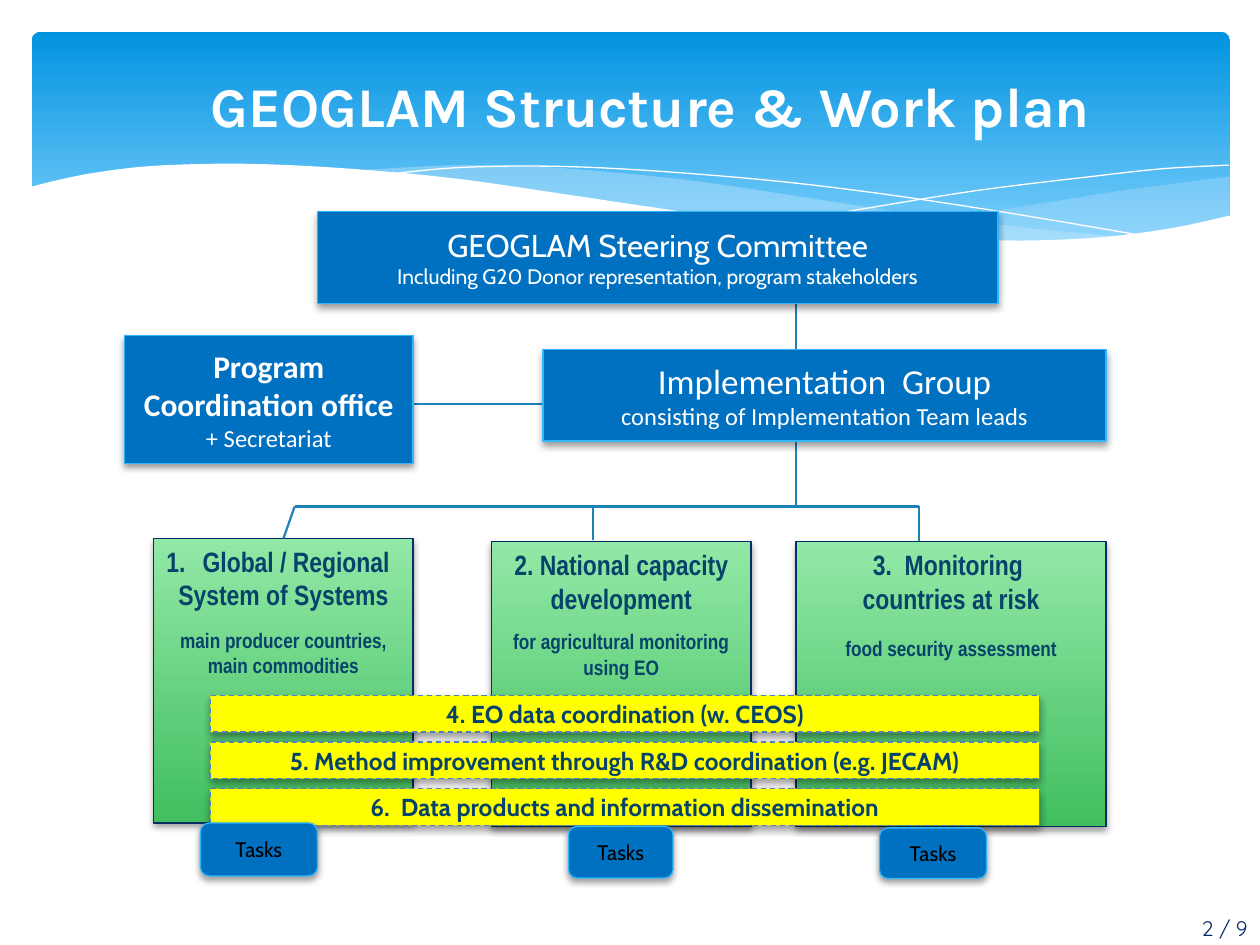
"""Build the GEOGLAM structure and work plan slide."""
import pptx
import pptx.util
import pptx.dml.color
import pptx.enum.shapes
import pptx.enum.text
import pptx.oxml
import pptx.oxml.ns

Cm, Pt = pptx.util.Cm, pptx.util.Pt
SHAPE = pptx.enum.shapes.MSO_SHAPE
ALIGN = pptx.enum.text.PP_ALIGN
ANCHOR = pptx.enum.text.MSO_ANCHOR
NS = pptx.oxml.ns.nsdecls("a")

COLORS = {
    "white": "FFFFFF", "black": "000000", "sky": "0293E0", "pale": "83D3FE",
    "wave": "C6E7FC", "blue": "0070C0", "edge": "31B6FD", "link": "1C83B9",
    "mint": "92E8A6", "green": "41BF60", "navy": "052E65", "ink": "06436B",
    "yellow": "FFFF00", "dash": "4F81BD", "number": "002569",
}
FONTS = {
    "title": {"name": "Karla", "size": Pt(32), "bold": True},
    "committee": {"name": "Cabin", "size": Pt(18)},
    "members": {"name": "Cabin", "size": Pt(12)},
    "group": {"name": "Calibri", "size": Pt(20)},
    "leads": {"name": "Calibri", "size": Pt(14)},
    "office": {"name": "Calibri", "size": Pt(18), "bold": True},
    "heading": {"name": "Arial Narrow", "size": Pt(16), "bold": True},
    "detail": {"name": "Arial Narrow", "size": Pt(12), "bold": True},
    "bar": {"name": "Cabin", "size": Pt(14), "bold": True},
    "number": {"name": "Quicksand", "size": Pt(12)},
}

TITLE = "GEOGLAM Structure & Work plan"
BOXES = [
    ((6.4, 4.27, 13.72, 1.85), [
        ("GEOGLAM Steering Committee", "committee"),
        ("Including G20 Donor representation, program stakeholders", "members")]),
    ((10.95, 7.04, 11.35, 1.85), [
        ("Implementation  Group", "group"),
        ("consisting of Implementation Team leads", "leads")]),
    ((2.51, 6.76, 5.82, 2.59), [
        ("Program Coordination office", "office"), ("+ Secretariat", "leads")]),
]
COLUMNS = [
    ((3.1, 10.85, 5.23, 5.74), " Global / Regional System of Systems",
     "main producer countries, main commodities", 9),
    ((9.91, 10.92, 5.23, 5.74), "2. National capacity development",
     "for agricultural monitoring using EO", 8),
    ((16.05, 10.92, 6.25, 5.74), "3.  Monitoring \ncountries at risk",
     "food security assessment", 12),
]
BARS = [
    "4. EO data coordination (w. CEOS)",
    "5. Method improvement through R&D coordination (e.g. JECAM)",
    "6.  Data products and information dissemination",
]
TASKS = [(4.04, 16.59, 2.36, 1.07), (11.46, 16.66, 2.11, 1.04), (17.73, 16.69, 2.16, 1.02)]
RAIL = 10.21
LINKS = [
    (16.05, RAIL, 16.05, 6.12),
    (5.94, RAIL, 18.52, RAIL),
    (11.96, RAIL, 11.96, 10.88),
    (18.52, RAIL, 18.52, 10.9),
    (8.28, 8.15, 11, 8.15),
]
WAVES = [
    ("wave", 29, [
        [(24.79, 3.56), (22.63, 3.84), (20.45, 4.19), (18.52, 4.45), (16.79, 4.65)],
        [(16.79, 4.65), (17.91, 4.75), (19.23, 4.83), (20.68, 4.85), (22.15, 4.8),
         (23.57, 4.62), (24.79, 4.34)]]),
    ("wave", 40, [
        [(22.68, 4.78), (20.5, 4.57), (17.93, 4.24), (15.98, 3.94), (14.1, 3.66),
         (12.42, 3.48), (10.67, 3.35), (9.17, 3.33), (7.26, 3.43)],
        [(7.26, 3.43), (9.19, 3.61), (11.4, 3.94), (14.38, 4.37), (16.51, 4.62),
         (18.34, 4.8), (20.22, 4.88), (21.54, 4.85), (22.68, 4.78)]]),
    (None, 100, [
        [(7.85, 3.51), (9.22, 3.38), (11, 3.35), (12.95, 3.43), (15.44, 3.63),
         (17.65, 3.89), (20.19, 4.27), (23.04, 4.75)]]),
    (None, 100, [
        [(15.57, 4.52), (17.65, 4.17), (19.71, 3.84), (22, 3.56), (23.47, 3.4),
         (24.77, 3.33)]]),
    ("white", 100, [
        [(24.82, 4.34), (23.62, 4.6), (22.23, 4.78), (20.55, 4.85), (18.44, 4.78),
         (15.9, 4.55), (13.44, 4.22), (11.35, 3.91), (9.27, 3.61), (7.42, 3.43),
         (5.84, 3.33), (4.5, 3.3), (3.02, 3.35), (1.93, 3.48), (1.17, 3.63), (0.58, 3.78)],
        [(0.58, 5.72), (24.82, 5.72)]]),
]


def rgb(name):
    return pptx.dml.color.RGBColor.from_string(COLORS[name])


def paint(sp, fill, line=None, width=0.75):
    sp.shadow.inherit = False
    if isinstance(fill, tuple):
        sp.fill.gradient()
        sp.fill.gradient_angle = 270
        for stop, name in zip(sp.fill.gradient_stops, fill):
            stop.color.rgb = rgb(name)
    elif fill:
        sp.fill.solid()
        sp.fill.fore_color.rgb = rgb(fill)
    else:
        sp.fill.background()
    if line:
        sp.line.color.rgb = rgb(line)
        sp.line.width = Pt(width)
    else:
        sp.line.fill.background()


def write(tf, lines, color, align=ALIGN.CENTER, anchor=ANCHOR.MIDDLE):
    tf.word_wrap = True
    tf.vertical_anchor = anchor
    for i, (text, font) in enumerate(lines):
        p = tf.add_paragraph() if i else tf.paragraphs[0]
        p.text = text
        p.alignment = align
        for r in p.runs:
            r.font.color.rgb = rgb(color)
            for key, value in FONTS[font].items():
                setattr(r.font, key, value)


def add_box(s, at, lines, color, fill, line, kind=SHAPE.RECTANGLE, anchor=ANCHOR.MIDDLE):
    sp = s.shapes.add_shape(kind, *map(Cm, at))
    paint(sp, fill, line)
    sp.element.spPr.find(pptx.oxml.ns.qn("a:effectLst")).append(pptx.oxml.parse_xml(
        f'<a:outerShdw {NS} blurRad="50800" dist="25400" dir="5400000" rotWithShape="0">'
        '<a:srgbClr val="000000"><a:alpha val="38000"/></a:srgbClr></a:outerShdw>'))
    write(sp.text_frame, lines, color, anchor=anchor)
    return sp


def add_link(s, x1, y1, x2, y2):
    c = s.shapes.add_connector(pptx.enum.shapes.MSO_CONNECTOR.STRAIGHT,
                               *map(Cm, (x1, y1, x2, y2)))
    c.line.color.rgb = rgb("link")
    c.line.width = Pt(1.25)
    c.element.spPr.append(pptx.oxml.parse_xml(f"<a:effectLst {NS}/>"))
    return c


def smooth(points, steps=5):
    if len(points) < 3:
        return points
    padded = [points[0], *points, points[-1]]
    curve = [points[0]]
    for a, b, c, d in zip(padded, padded[1:], padded[2:], padded[3:]):
        for t in (k / steps for k in range(1, steps + 1)):
            curve.append(tuple(
                b[i] + t * (c[i] - a[i]) / 2
                + t * t * (a[i] - 2.5 * b[i] + 2 * c[i] - d[i] / 2)
                + t ** 3 * (3 * b[i] - a[i] - 3 * c[i] + d[i]) / 2 for i in (0, 1)))
    return curve


def add_wave(s, fill, opacity, runs):
    points = [(Cm(x), Cm(y)) for run in runs for x, y in smooth(run)]
    builder = s.shapes.build_freeform(*points[0])
    builder.add_line_segments(points[1:], close=bool(fill))
    sp = builder.convert_to_shape()
    paint(sp, fill, None if fill else "white", 0)
    if opacity < 100:
        clr = sp.element.spPr.find(".//" + pptx.oxml.ns.qn("a:srgbClr"))
        clr.append(pptx.oxml.parse_xml(f'<a:alpha {NS} val="{opacity * 1000}"/>'))


def main():
    prs = pptx.Presentation()
    prs.slide_width, prs.slide_height = Cm(25.4), Cm(19.05)
    s = prs.slides.add_slide(prs.slide_layouts[5])

    header = s.shapes.add_shape(SHAPE.ROUNDED_RECTANGLE, *map(Cm, (0.64, 0.64, 24.15, 5.03)))
    header.adjustments[0] = 0.034
    paint(header, ("sky", "pale"))
    header.fill.gradient_stops[1].position = 0.9
    for wave in WAVES:
        add_wave(s, *wave)

    title = s.shapes.title
    title.left, title.top, title.width, title.height = map(Cm, (2.11, 0.81, 22.02, 2.62))
    write(title.text_frame, [(TITLE, "title")], "white")
    title.element.getparent().append(title.element)

    columns = []
    for at, heading, detail, gap in COLUMNS:
        sp = add_box(s, at, [(heading, "heading"), (detail, "detail")], "ink",
                     ("mint", "green"), "navy", anchor=ANCHOR.TOP)
        sp.text_frame.paragraphs[1].space_before = Pt(gap)
        columns.append(sp)
    pPr = columns[0].text_frame.paragraphs[0]._p.get_or_add_pPr()
    pPr.append(pptx.oxml.parse_xml(f'<a:buAutoNum {NS} type="arabicPeriod"/>'))

    for link in LINKS:
        add_link(s, *link)
    add_link(s, 5.94, RAIL, 5.72, 10.85).end_connect(columns[0], 0)

    for at, lines in BOXES:
        add_box(s, at, lines, "white", "blue", "edge")
    for i, text in enumerate(BARS):
        sp = add_box(s, (4.24, 14.02 + 0.94 * i, 16.71, 0.74), [(text, "bar")],
                     "ink", "yellow", "dash")
        sp.line.dash_style = pptx.enum.dml.MSO_LINE.DASH
    for at in TASKS:
        add_box(s, at, [("Tasks", "members")], "black", "blue", "edge", SHAPE.ROUNDED_RECTANGLE)

    number = s.shapes.add_textbox(*map(Cm, (20.12, 18.34, 5.28, 0.71)))
    write(number.text_frame, [("2 / 9", "number")], "number", ALIGN.RIGHT, ANCHOR.TOP)
    prs.save("out.pptx")


if __name__ == "__main__":
    main()
